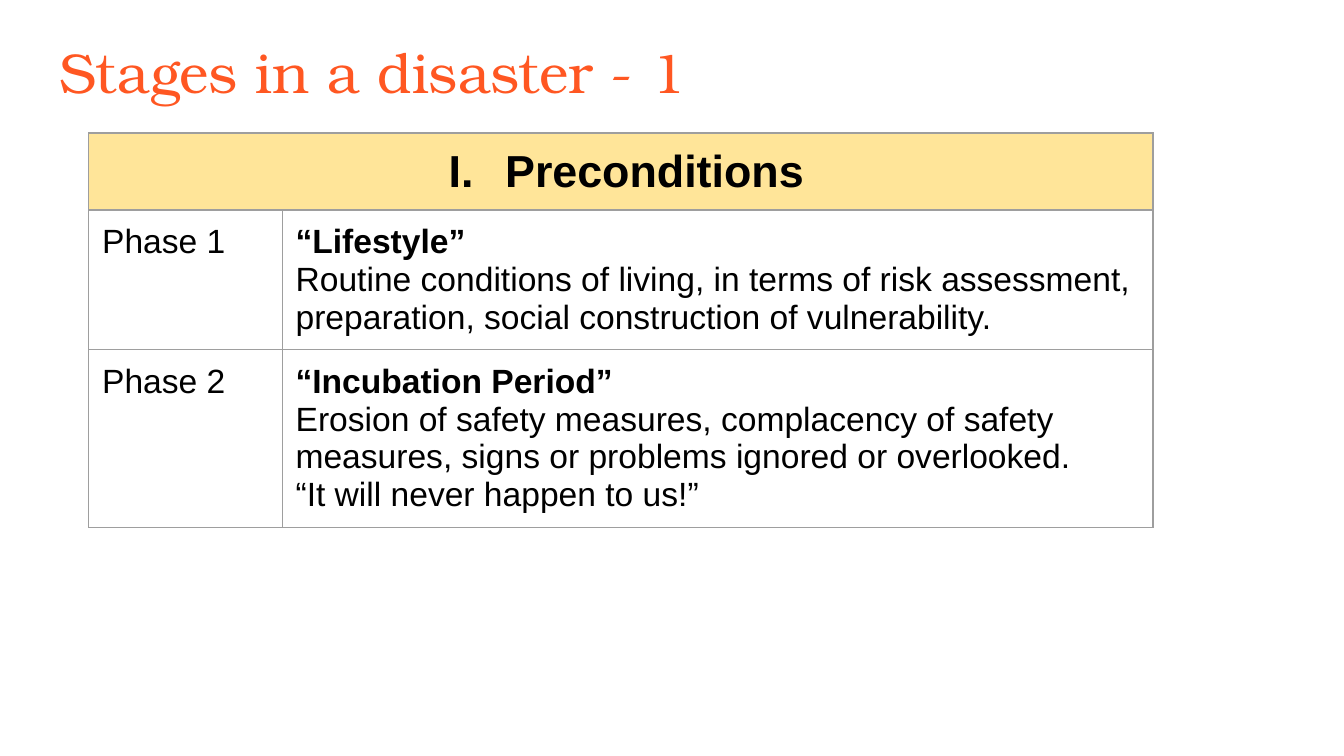
import lxml.etree
import pptx
import pptx.dml.color
import pptx.enum.text
import pptx.oxml
import pptx.oxml.ns
import pptx.util

Inches = pptx.util.Inches
NS = pptx.oxml.ns.nsdecls("a")
PHASES = [
    ("Phase 1", "“Lifestyle”",
     ["Routine conditions of living, in terms of risk assessment, "
      "preparation, social construction of vulnerability."]),
    ("Phase 2", "“Incubation Period”",
     ["Erosion of safety measures, complacency of safety measures, "
      "signs or problems ignored or overlooked.",
      "“It will never happen to us!”"]),
]


def rgb(color):
    """Turn a hex string into a colour."""
    return pptx.dml.color.RGBColor.from_string(color)


def add_run(p, text, size, font="Arial", color="000000", bold=False):
    """Add one formatted run to a paragraph."""
    r = p.add_run()
    r.text = text
    r.font.size = pptx.util.Pt(size)
    r.font.name = font
    r.font.bold = bold
    r.font.color.rgb = rgb(color)


def set_insets(obj):
    """Give a cell or text frame equal margins."""
    obj.margin_left = obj.margin_right = Inches(0.1)
    obj.margin_top = obj.margin_bottom = Inches(0.1)


def style_cell(cell, fill=None, border="9E9E9E"):
    """Set the margins, fill and four borders of a cell."""
    set_insets(cell)
    cell.vertical_anchor = pptx.enum.text.MSO_ANCHOR.TOP
    if fill:
        cell.fill.solid()
        cell.fill.fore_color.rgb = rgb(fill)
    else:
        cell.fill.background()
    tc_pr = cell._tc.get_or_add_tcPr()
    for i, side in enumerate("LRTB"):
        tc_pr.insert(i, pptx.oxml.parse_xml(
            f'<a:ln{side} {NS} w="9525"><a:solidFill><a:srgbClr val="{border}"/>'
            f'</a:solidFill></a:ln{side}>'))


def number_roman(p, margin, indent):
    """Number a paragraph with a capital roman numeral."""
    p_pr = p._p.get_or_add_pPr()
    p_pr.set("marL", str(Inches(margin)))
    p_pr.set("indent", str(Inches(indent)))
    bu = lxml.etree.SubElement(p_pr, pptx.oxml.ns.qn("a:buAutoNum"))
    bu.set("type", "romanUcPeriod")


def place_title(slide, left, top, width, height):
    """Fill the title placeholder and place it in its box."""
    sp = slide.shapes.title
    sp.left, sp.top = Inches(left), Inches(top)
    sp.width, sp.height = Inches(width), Inches(height)
    tf = sp.text_frame
    tf.word_wrap = True
    tf.auto_size = pptx.enum.text.MSO_AUTO_SIZE.NONE
    tf.vertical_anchor = pptx.enum.text.MSO_ANCHOR.TOP
    set_insets(tf)
    p = tf.paragraphs[0]
    p.alignment = pptx.enum.text.PP_ALIGN.LEFT
    add_run(p, "Stages in a disaster - 1", 30, "TeX Gyre Bonum", "FF5722")


def place_phases(slide, left, top, width, height):
    """Build the table of phases under one merged heading."""
    label_width = 1.44
    row_heights = [0.57, 1.04, height - 0.57 - 1.04]
    table = slide.shapes.add_table(
        len(row_heights), 2, Inches(left), Inches(top),
        Inches(width), Inches(height)).table
    table.first_row = table.horz_banding = False
    table.columns[0].width = Inches(label_width)
    table.columns[1].width = Inches(width - label_width)
    for i, row in enumerate(table.rows):
        row.height = Inches(row_heights[i])
        for cell in row.cells:
            style_cell(cell, None if i else "FFE599")

    head = table.cell(0, 0)
    head.merge(table.cell(0, 1))
    p = head.text_frame.paragraphs[0]
    p.alignment = pptx.enum.text.PP_ALIGN.CENTER
    number_roman(p, 0.5, -0.42)
    add_run(p, "Preconditions", 24, bold=True)

    for i, (label, name, lines) in enumerate(PHASES, 1):
        add_run(table.cell(i, 0).text_frame.paragraphs[0], label, 18)
        tf = table.cell(i, 1).text_frame
        add_run(tf.paragraphs[0], name, 18, bold=True)
        for line in lines:
            add_run(tf.add_paragraph(), line, 18)


def main():
    """Build and save the slide."""
    prs = pptx.Presentation()
    prs.slide_width = Inches(10)
    prs.slide_height = prs.slide_width * 9 // 16
    slide = prs.slides.add_slide(prs.slide_layouts[5])
    slide.background.fill.solid()
    slide.background.fill.fore_color.rgb = rgb("FFFFFF")
    place_title(slide, 0.34, 0.18, 9.32, 0.63)
    place_phases(slide, 0.66, 0.99, 7.92, 2.93)
    prs.save("out.pptx")


if __name__ == "__main__":
    main()
